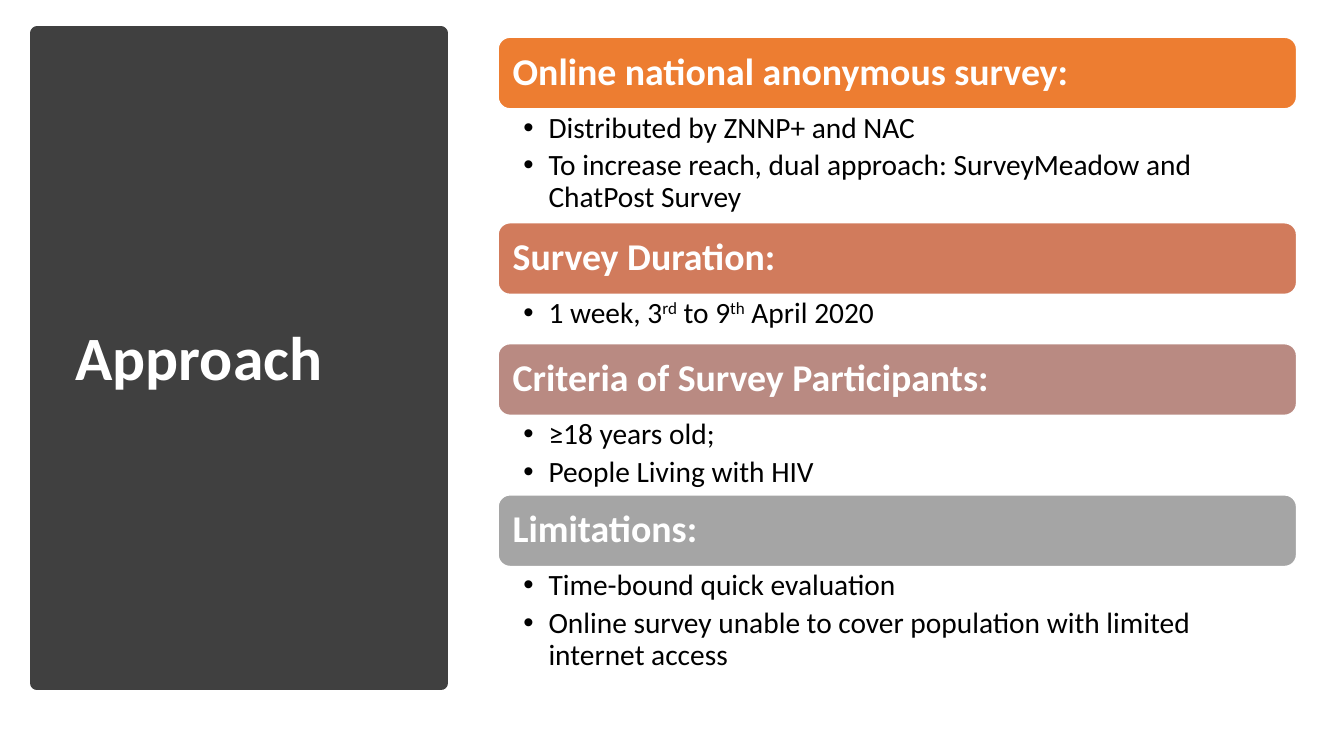
from lxml.etree import SubElement
from pptx import Presentation
from pptx.dml.color import RGBColor
from pptx.enum.shapes import MSO_SHAPE as Shape
from pptx.enum.text import MSO_ANCHOR as Anchor, PP_ALIGN as Align
from pptx.oxml.ns import qn
from pptx.util import Inches, Pt

WIDTH, HEIGHT = Inches(13.33), Inches(7.5)
FONT = "Calibri"
WHITE = RGBColor(0xFF, 0xFF, 0xFF)
BLACK = RGBColor(0x00, 0x00, 0x00)
CHARCOAL = RGBColor(0x40, 0x40, 0x40)
ORANGE = RGBColor(0xED, 0x7D, 0x31)
TERRACOTTA = RGBColor(0xD1, 0x7B, 0x5C)
ROSE = RGBColor(0xB9, 0x8A, 0x82)
GREY = RGBColor(0xA5, 0xA5, 0xA5)

# Places and sizes are percentages of the slide's width and height.
PANEL = (2.78, 4.4, 30.01, 86)
TITLE = (4.88, 9.33, 25.96, 76.67)
LIST_LEFT, LIST_TOP, LIST_WIDTH = 37.06, 4.93, 59.41
HEADING_HEIGHT = 9.47

# Heading, colour, height of the bullets, bullets (superscripts between ^ marks)
SECTIONS = [
    ("Online national anonymous survey:", ORANGE, 15.07,
     ["Distributed by ZNNP+ and NAC",
      "To increase reach, dual approach: SurveyMeadow and ChatPost Survey"]),
    ("Survey Duration:", TERRACOTTA, 6.53,
     ["1 week, 3^rd^ to 9^th^ April 2020"]),
    ("Criteria of Survey Participants:", ROSE, 10.53,
     ["≥18 years old;", "People Living with HIV"]),
    ("Limitations:", GREY, 15.07,
     ["Time-bound quick evaluation",
      "Online survey unable to cover population with limited internet access"]),
]


def place(left, top, width, height):
    """Turn percentages of the slide into lengths."""
    return [round(share * side / 100) for share, side in
            zip((left, top, width, height), (WIDTH, HEIGHT, WIDTH, HEIGHT))]


def add_box(slide, kind, area, fill, line, line_width):
    shape = slide.shapes.add_shape(kind, *place(*area))
    shape.shadow.inherit = False
    shape.fill.solid()
    shape.fill.fore_color.rgb = fill
    shape.line.color.rgb = line
    shape.line.width = Pt(line_width)
    return shape


def add_bullet(paragraph):
    properties = paragraph._p.get_or_add_pPr()
    properties.set("marL", str(Inches(0.25)))
    properties.set("indent", str(-Inches(0.25)))
    SubElement(properties, qn("a:buFont"), typeface="Arial")
    SubElement(properties, qn("a:buChar"), char="•")


def write(shape, lines, size, color, bold=False, anchor=Anchor.MIDDLE,
          insets=(0.1, 0.05, 0.1, 0.05), space_after=0, bullets=False):
    """Fill a shape with one paragraph a line; insets are in inches."""
    frame = shape.text_frame
    frame.word_wrap = True
    frame.vertical_anchor = anchor
    (frame.margin_left, frame.margin_top,
     frame.margin_right, frame.margin_bottom) = map(Inches, insets)
    for index, line in enumerate(lines):
        paragraph = frame.add_paragraph() if index else frame.paragraphs[0]
        paragraph.alignment = Align.LEFT
        paragraph.line_spacing = 0.9
        paragraph.space_after = Pt(space_after)
        if bullets:
            add_bullet(paragraph)
        for part, text in enumerate(line.split("^")):
            run = paragraph.add_run()
            run.text = text
            font = run.font
            font.name, font.size, font.bold = FONT, Pt(size), bold
            font.color.rgb = color
            if part % 2:
                run._r.get_or_add_rPr().set("baseline", "30000")


def add_text(slide, area, lines, **text_format):
    write(slide.shapes.add_textbox(*place(*area)), lines, **text_format)


def add_section(slide, top, heading, color, body_height, bullets):
    """Draw a heading bar with its bullets and return where they end."""
    bar = add_box(slide, Shape.ROUNDED_RECTANGLE,
                  (LIST_LEFT, top, LIST_WIDTH, HEADING_HEIGHT), color, WHITE, 1)
    write(bar, [heading], size=27, color=WHITE, bold=True, insets=(0.11,) * 4)
    body_top = top + HEADING_HEIGHT
    add_text(slide, (LIST_LEFT, body_top, LIST_WIDTH, body_height), bullets,
             size=21, color=BLACK, anchor=Anchor.TOP, bullets=True,
             insets=(0.25, 0.04, 0.21, 0.04), space_after=4.2)
    return body_top + body_height


def main():
    presentation = Presentation()
    presentation.slide_width, presentation.slide_height = WIDTH, HEIGHT
    slide = presentation.slides.add_slide(presentation.slide_layouts[6])
    add_box(slide, Shape.RECTANGLE, PANEL, CHARCOAL, CHARCOAL, 10)
    add_text(slide, TITLE, ["Approach"], size=44, color=WHITE, bold=True)
    top = LIST_TOP
    for section in SECTIONS:
        top = add_section(slide, top, *section)
    presentation.save("out.pptx")


if __name__ == "__main__":
    main()
